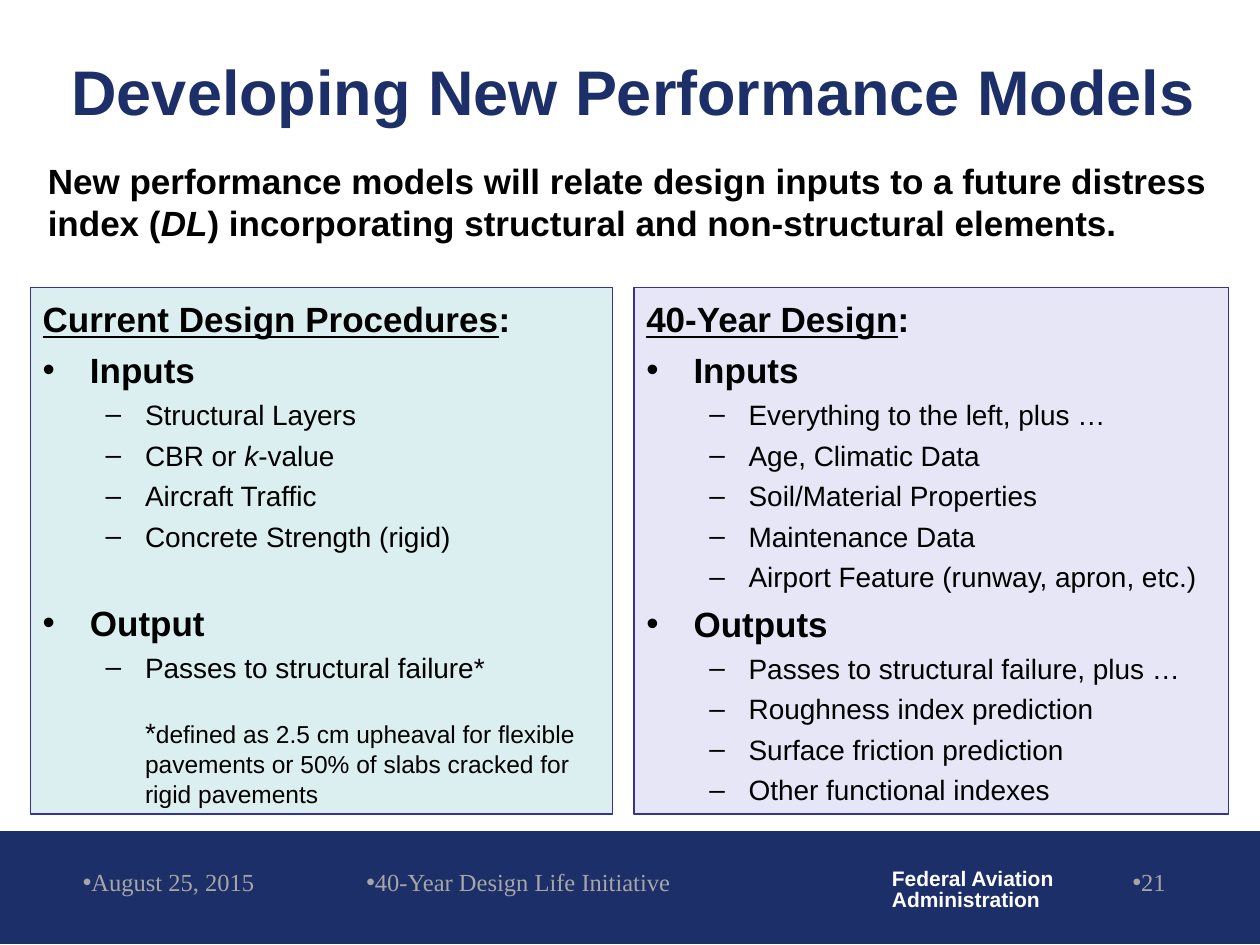
"""Build the slide on new pavement performance models."""
from lxml.etree import SubElement
from pptx import Presentation
from pptx.dml.color import RGBColor
from pptx.enum.shapes import MSO_SHAPE
from pptx.enum.text import MSO_ANCHOR, PP_ALIGN
from pptx.oxml.ns import qn
from pptx.util import Pt

NAVY = RGBColor(0x1D, 0x2F, 0x68)
EDGE = RGBColor(0x33, 0x33, 0x99)
TEAL = RGBColor(0xBB, 0xE0, 0xE3)
LILAC = RGBColor(0xCE, 0xCE, 0xEF)
GRAY = RGBColor(0xA6, 0xA6, 0xA6)
BLACK = RGBColor(0, 0, 0)
WHITE = RGBColor(255, 255, 255)

TITLE = "Developing New Performance Models"
INTRO = ("New performance models will relate design inputs to a future distress "
         "index (_DL_) incorporating structural and non-structural elements.")
AGENCY = ["Federal Aviation", "Administration"]

LEFT = [
    ("head", "_Current Design Procedures_:", 0),
    ("group", "Inputs", 5),
    ("item", "Structural Layers", 4),
    ("item", "CBR or _k_-value", 4),
    ("item", "Aircraft Traffic", 4),
    ("item", "Concrete Strength (rigid)", 4),
    ("group", "Output", 27.5),
    ("item", "Passes to structural failure*", 4),
    ("note", "_*_defined as 2.5 cm upheaval for flexible pavements "
             "or 50% of slabs cracked for rigid pavements", 18.4),
]
RIGHT = [
    ("head", "_40-Year Design_:", 0),
    ("group", "Inputs", 5),
    ("item", "Everything to the left, plus …", 4),
    ("item", "Age, Climatic Data", 4),
    ("item", "Soil/Material Properties", 4),
    ("item", "Maintenance Data", 4),
    ("item", "Airport Feature (runway, apron, etc.)", 4),
    ("group", "Outputs", 5),
    ("item", "Passes to structural failure, plus …", 4),
    ("item", "Roughness index prediction", 4),
    ("item", "Surface friction prediction", 4),
    ("item", "Other functional indexes", 4),
]
PANELS = [(17.3, 332.6, TEAL, LEFT), (362.2, 339.8, LILAC, RIGHT)]
FOOTER = [
    (40.3, 136.8, "August 25, 2015", PP_ALIGN.LEFT),
    (182.2, 228.2, "40-Year Design Life Initiative", PP_ALIGN.CENTER),
    (523.4, 149.8, "21", PP_ALIGN.RIGHT),
]
STYLES = {
    "head": dict(size=20, bold=True, mark=("underline", True)),
    "group": dict(size=20, bold=True, left=27, hang=27, dot="•"),
    "item": dict(size=16, left=58.5, hang=22.5, dot="–"),
    "note": dict(size=14, left=58.5, mark=("size", Pt(16))),
}


def write(par, text, size, color=BLACK, bold=False, face="Arial",
          left=0, hang=0, dot=None, mark=("italic", True)):
    props = par._p.get_or_add_pPr()
    props.set("marL", str(Pt(left)))
    props.set("indent", str(-Pt(hang)))
    if dot:
        SubElement(props, qn("a:buFont"), typeface="Arial")
        SubElement(props, qn("a:buChar"), char=dot)
    else:
        SubElement(props, qn("a:buNone"))
    font = par.font
    font.size, font.bold, font.name = Pt(size), bold, face
    font.color.rgb = color
    for num, part in enumerate(text.split("_")):
        if part:
            run = par.add_run()
            run.text = part
            if num % 2:
                setattr(run.font, *mark)


def add_par(frame, num):
    return frame.add_paragraph() if num else frame.paragraphs[0]


def add_text(slide, x, y, wide, high, wrap=True):
    frame = slide.shapes.add_textbox(Pt(x), Pt(y), Pt(wide), Pt(high)).text_frame
    frame.word_wrap = wrap
    return frame


def add_rect(slide, x, y, wide, high, fill, line):
    rect = slide.shapes.add_shape(MSO_SHAPE.RECTANGLE, Pt(x), Pt(y), Pt(wide), Pt(high))
    rect.shadow.inherit = False
    rect.fill.solid()
    rect.fill.fore_color.rgb = fill
    rect.line.color.rgb = line
    rect.line.width = Pt(0.75)
    return rect


def add_panel(slide, x, wide, fill, rows):
    rect = add_rect(slide, x, 164.2, wide, 301, fill, EDGE)
    tint = rect._element.spPr.find(qn("a:solidFill"))[0]
    SubElement(tint, qn("a:alpha"), val="50000")
    frame = rect.text_frame
    frame.word_wrap = True
    frame.vertical_anchor = MSO_ANCHOR.TOP
    frame.margin_top = Pt(6)
    for num, (kind, text, gap) in enumerate(rows):
        par = add_par(frame, num)
        par.alignment = PP_ALIGN.LEFT
        if gap:
            par.space_before = Pt(gap)
        write(par, text, **STYLES[kind])


def main():
    deck = Presentation()
    deck.slide_width, deck.slide_height = Pt(720), Pt(540)
    slide = deck.slides.add_slide(deck.slide_layouts[6])

    add_rect(slide, 0, 475.2, 720, 64.1, NAVY, NAVY)
    frame = add_text(slide, 502.6, 493.2, 108, 31.7, wrap=False)
    for num, text in enumerate(AGENCY):
        par = add_par(frame, num)
        par.line_spacing = 0.85
        write(par, text, 12, WHITE, bold=True)

    frame = add_text(slide, 33.8, 27.4, 667.4, 48.2)
    frame.vertical_anchor = MSO_ANCHOR.MIDDLE
    write(frame.paragraphs[0], TITLE, 36, NAVY, bold=True)

    for panel in PANELS:
        add_panel(slide, *panel)

    frame = add_text(slide, 20.2, 87.8, 680.4, 55.4)
    write(frame.paragraphs[0], INTRO, 20, bold=True)

    for x, wide, text, align in FOOTER:
        par = add_text(slide, x, 491.8, wide, 36).paragraphs[0]
        par.alignment = align
        write(par, text, 14, GRAY, face="Times New Roman", dot="•")

    deck.save("out.pptx")


if __name__ == "__main__":
    main()
